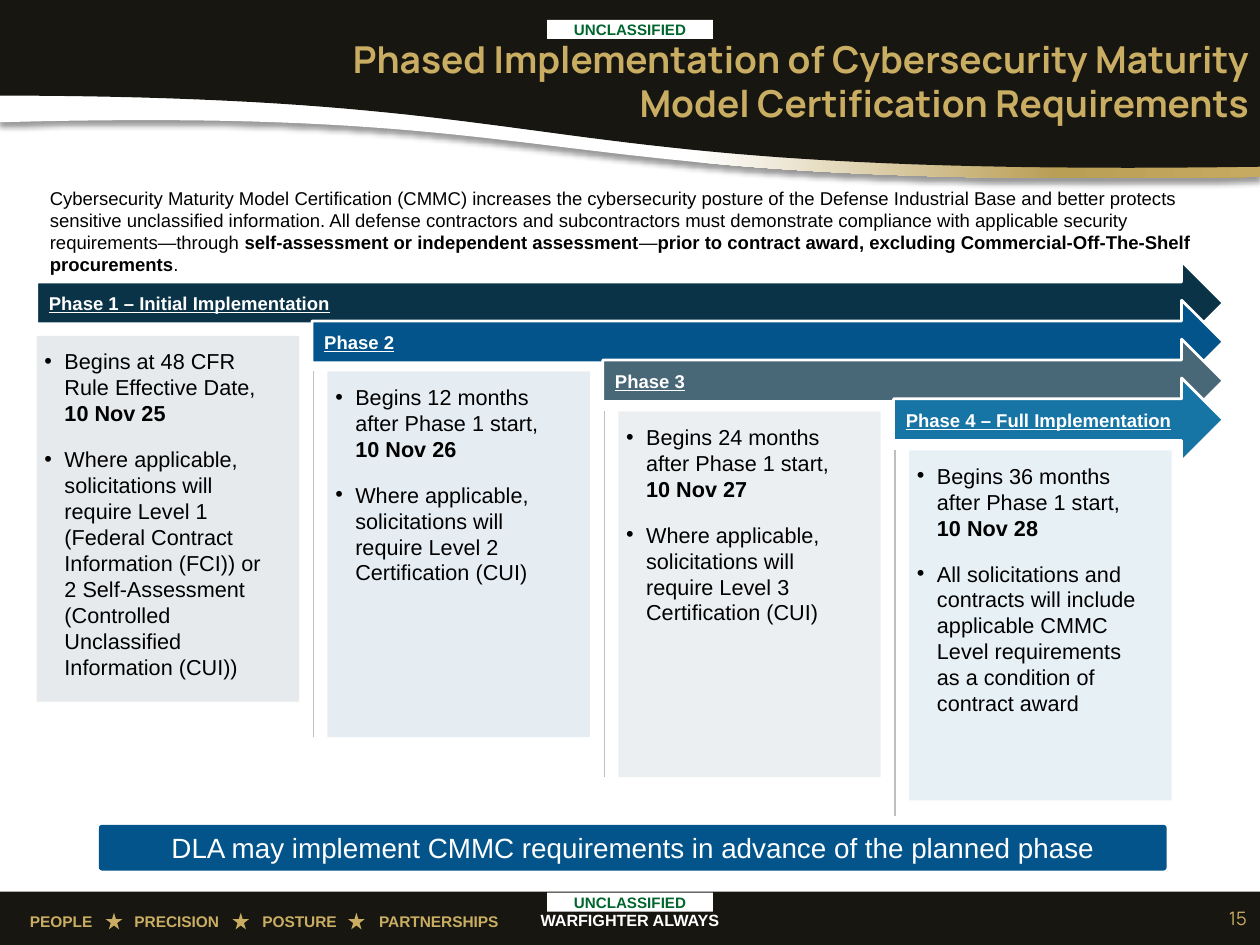
from copy import deepcopy

from lxml.etree import SubElement
from pptx import Presentation
from pptx.dml.color import RGBColor
from pptx.enum.shapes import MSO_CONNECTOR, MSO_SHAPE
from pptx.enum.text import MSO_ANCHOR, MSO_AUTO_SIZE, PP_ALIGN
from pptx.oxml.ns import qn
from pptx.util import Inches, Pt

BLACK = RGBColor(0x00, 0x00, 0x00)
WHITE = RGBColor(0xFF, 0xFF, 0xFF)
INK = RGBColor(0x17, 0x16, 0x10)
GOLD = RGBColor(0xC9, 0xAD, 0x62)
DARK_GOLD = RGBColor(0xB9, 0x9E, 0x55)
LIGHT_GOLD = RGBColor(0xC7, 0xAA, 0x61)
GREEN = RGBColor(0x00, 0x66, 0x2E)
GRAY = RGBColor(0xBF, 0xBF, 0xBF)
NAVY = RGBColor(0x0A, 0x33, 0x48)
BLUE = RGBColor(0x02, 0x54, 0x8B)
SLATE = RGBColor(0x48, 0x67, 0x77)
SKY = RGBColor(0x17, 0x75, 0xA6)

WIDTH, HEIGHT = 11.33, 8.5
ARROW_RIGHT = 11

INTRO = (
    "Cybersecurity Maturity Model Certification (CMMC) increases the cybersecurity posture of the "
    "Defense Industrial Base and better protects sensitive unclassified information. All defense "
    "contractors and subcontractors must demonstrate compliance with applicable security "
    "requirements—through **self-assessment or independent assessment**—**prior to contract award, "
    "excluding Commercial-Off-The-Shelf procurements**."
)

PHASES = [
    ("Phase 1 – Initial Implementation", NAVY, 3.02, 3.29, [
        "Begins at 48 CFR\nRule Effective Date,\n**10 Nov 25**",
        "Where applicable, solicitations will require Level 1 (Federal Contract Information (FCI)) "
        "or 2 Self-Assessment (Controlled Unclassified Information (CUI))"]),
    ("Phase 2", BLUE, 3.34, 3.29, [
        "Begins 12 months after Phase 1 start,\n**10 Nov 26**",
        "Where applicable, solicitations will require Level 2 Certification (CUI)"]),
    ("Phase 3", SLATE, 3.7, 3.29, [
        "Begins 24 months after Phase 1 start,\n**10 Nov 27**",
        "Where applicable, solicitations will require Level 3 Certification (CUI)"]),
    ("Phase 4 – Full Implementation", SKY, 4.05, 3.15, [
        "Begins 36 months after Phase 1 start,\n**10 Nov 28**",
        "All solicitations and contracts will include applicable CMMC Level requirements as a "
        "condition of contract award"]),
]


def box_size(left, top, width, height):
    return [Inches(length) for length in (left, top, width, height)]


def set_frame(shape, insets=(0.1, 0.05, 0.1, 0.05), anchor=MSO_ANCHOR.TOP):
    frame = shape.text_frame
    left, top, right, bottom = [Inches(inset) for inset in insets]
    values = {"word_wrap": True, "auto_size": MSO_AUTO_SIZE.NONE, "vertical_anchor": anchor,
              "margin_left": left, "margin_top": top,
              "margin_right": right, "margin_bottom": bottom}
    for name, value in values.items():
        setattr(frame, name, value)
    return frame


def write(para, text, size, color, align=PP_ALIGN.LEFT, font="Arial", bold=False, underline=False):
    para.alignment = align
    for part_index, part in enumerate(text.split("**")):
        values = {"name": font, "size": Pt(size), "underline": underline,
                  "bold": bold or part_index % 2 == 1}
        for line_index, line in enumerate(part.split("\n")):
            if line_index:
                para.add_line_break()
            if line:
                span = para.add_run()
                span.text = line
                for name, value in values.items():
                    setattr(span.font, name, value)
                span.font.color.rgb = color


def add_block(page, kind, place, color, line=None):
    shape = page.shapes.add_shape(kind, *box_size(*place))
    shape.shadow.inherit = False
    shape.fill.solid()
    shape.fill.fore_color.rgb = color
    if line:
        shape.line.color.rgb = line
        shape.line.width = Pt(1.75)
    else:
        shape.line.fill.background()
    return shape


def add_text(page, place, text, size, color, anchor=MSO_ANCHOR.TOP, **style):
    box = page.shapes.add_textbox(*box_size(*place))
    para = set_frame(box, anchor=anchor).paragraphs[0]
    write(para, text, size, color, **style)
    return para


def add_wave(page, top, curve, steps=48):
    points = [(0, top)]
    for step in range(steps + 1):
        t = step / steps
        weights = ((1 - t) ** 3, 3 * t * (1 - t) ** 2, 3 * t * t * (1 - t), t ** 3)
        points.append([sum(w * point[axis] for w, point in zip(weights, curve)) for axis in (0, 1)])
    builder = page.shapes.build_freeform(Inches(WIDTH), Inches(top))
    builder.add_line_segments([(Inches(x), Inches(y)) for x, y in points], close=True)
    wave = builder.convert_to_shape()
    wave.shadow.inherit = False
    wave.line.fill.background()
    return wave


def add_header(page):
    band = add_wave(page, 0.59, [(0, 1.1), (5.49, 0.95), (4.54, 1.72), (WIDTH, 1.59)])
    band.fill.gradient()
    band.fill.gradient_angle = 0
    stop_list = band._element.spPr.find(qn("a:gradFill")).find(qn("a:gsLst"))
    stop_list.append(deepcopy(stop_list[-1]))
    colors = ((0.55, WHITE), (0.84, DARK_GOLD), (1, LIGHT_GOLD))
    for stop, (position, color) in zip(band.fill.gradient_stops, colors):
        stop.position = position
        stop.color.rgb = color
    effects = band._element.spPr.find(qn("a:effectLst"))
    shadow = SubElement(effects, qn("a:outerShdw"), blurRad=str(Pt(4)), dist=str(Pt(3)),
                        dir="5400000", algn="t", rotWithShape="0")
    shade = SubElement(shadow, qn("a:srgbClr"), val=str(BLACK))
    SubElement(shade, qn("a:alpha"), val="40000")
    cover = add_wave(page, 0, [(0, 0.86), (5.46, 0.87), (4.52, 1.6), (WIDTH, 1.5)])
    cover.fill.solid()
    cover.fill.fore_color.rgb = INK


def add_footer(page):
    add_block(page, MSO_SHAPE.RECTANGLE, (0, 8.02, WIDTH, 0.48), INK)
    add_text(page, (4.47, 8.14, 2.39, 0.28), "WARFIGHTER ALWAYS", 10.5, WHITE,
             align=PP_ALIGN.CENTER, bold=True)
    values = add_text(page, (0.17, 8.15, 4.61, 0.28),
                      "PEOPLE\tPRECISION\tPOSTURE\tPARTNERSHIPS", 10, GOLD, bold=True)
    tabs = SubElement(values._p.get_or_add_pPr(), qn("a:tabLst"))
    for position in (0.94, 2.09, 3.14):
        SubElement(tabs, qn("a:tab"), pos=str(Inches(position)), algn="l")
    for left in (0.95, 2.09, 3.13):
        add_block(page, MSO_SHAPE.STAR_5_POINT, (left, 8.21, 0.15, 0.15), GOLD)
    add_text(page, (10.79, 8.03, 0.52, 0.45), "15", 12, GOLD, MSO_ANCHOR.MIDDLE,
             align=PP_ALIGN.RIGHT, font="Manrope")


def add_marking(page, top):
    label = add_block(page, MSO_SHAPE.RECTANGLE, (4.92, top, 1.49, 0.17), WHITE)
    frame = set_frame(label, (0, 0, 0, 0), MSO_ANCHOR.MIDDLE)
    write(frame.paragraphs[0], "UNCLASSIFIED", 9.8, GREEN, PP_ALIGN.CENTER, bold=True)


def place_shape(shape, place):
    for name, value in zip(("left", "top", "width", "height"), box_size(*place)):
        setattr(shape, name, value)


def fill_panel(panel, place, color, items):
    place_shape(panel, place)
    panel.fill.solid()
    panel.fill.fore_color.rgb = color
    tint = panel._element.spPr.find(qn("a:solidFill"))[0]
    SubElement(tint, qn("a:alpha"), val="10000")
    frame = set_frame(panel, (0, 0.11, 0.25, 0))
    for index, item in enumerate(items):
        para = frame.paragraphs[0] if index == 0 else frame.add_paragraph()
        para.space_before = Pt(index)
        para.space_after = Pt(12)
        layout = para._p.get_or_add_pPr()
        layout.set("marL", str(Inches(0.25)))
        layout.set("indent", str(Inches(-0.18)))
        SubElement(layout, qn("a:buFont"), typeface="Arial")
        SubElement(layout, qn("a:buChar"), char="•")
        write(para, item, 14, BLACK)


def add_phase(page, index, panel, phase):
    name, color, top, height, items = phase
    left = 0.33 + 2.615 * index
    fill_panel(panel, (left, top, 2.36, height), color, items)
    arrow_left = left - 0.14 if index else left
    arrow = add_block(page, MSO_SHAPE.RIGHT_ARROW,
                      (arrow_left, 2.35 + 0.35 * index, ARROW_RIGHT - arrow_left, 0.75), color, WHITE)
    frame = set_frame(arrow, (0.11, 0.1, 0, 0.1), MSO_ANCHOR.MIDDLE)
    write(frame.paragraphs[0], name, 12, WHITE, bold=True, underline=True)
    if index:
        x = Inches(left - 0.125)
        divider = page.shapes.add_connector(MSO_CONNECTOR.STRAIGHT, x, Inches(top),
                                            x, Inches(top + 3.29))
        divider.line.color.rgb = GRAY
        divider.line.width = Pt(1)
        SubElement(divider._element.spPr, qn("a:effectLst"))


def add_title(page):
    title = page.shapes.title
    place_shape(title, (2.48, 0.52, 8.85, 0.41))
    frame = set_frame(title, anchor=MSO_ANCHOR.MIDDLE)
    write(frame.paragraphs[0],
          "Phased Implementation of Cybersecurity Maturity Model Certification Requirements",
          24, GOLD, PP_ALIGN.RIGHT, "Manrope", True)
    page.shapes._spTree.append(title._element)


def add_notice(page):
    notice = add_block(page, MSO_SHAPE.ROUNDED_RECTANGLE, (0.89, 7.42, 9.6, 0.41), BLUE)
    notice.adjustments[0] = 0.064
    frame = set_frame(notice, (0, 0, 0, 0), MSO_ANCHOR.MIDDLE)
    write(frame.paragraphs[0], "DLA may implement CMMC requirements in advance of the planned phase",
          18, WHITE, PP_ALIGN.CENTER)


def main():
    deck = Presentation()
    deck.slide_width, deck.slide_height = Inches(WIDTH), Inches(HEIGHT)
    page = deck.slides.add_slide(deck.slide_layouts.get_by_name("Comparison"))
    panels = [page.placeholders[number] for number in range(1, 5)]
    add_footer(page)
    add_header(page)
    for top in (0.18, 8.03):
        add_marking(page, top)
    add_text(page, (0.35, 1.63, 10.67, 0.91), INTRO, 12, BLACK)
    for index, (panel, phase) in enumerate(zip(panels, PHASES)):
        add_phase(page, index, panel, phase)
    add_notice(page)
    add_title(page)
    deck.save("out.pptx")


if __name__ == "__main__":
    main()
